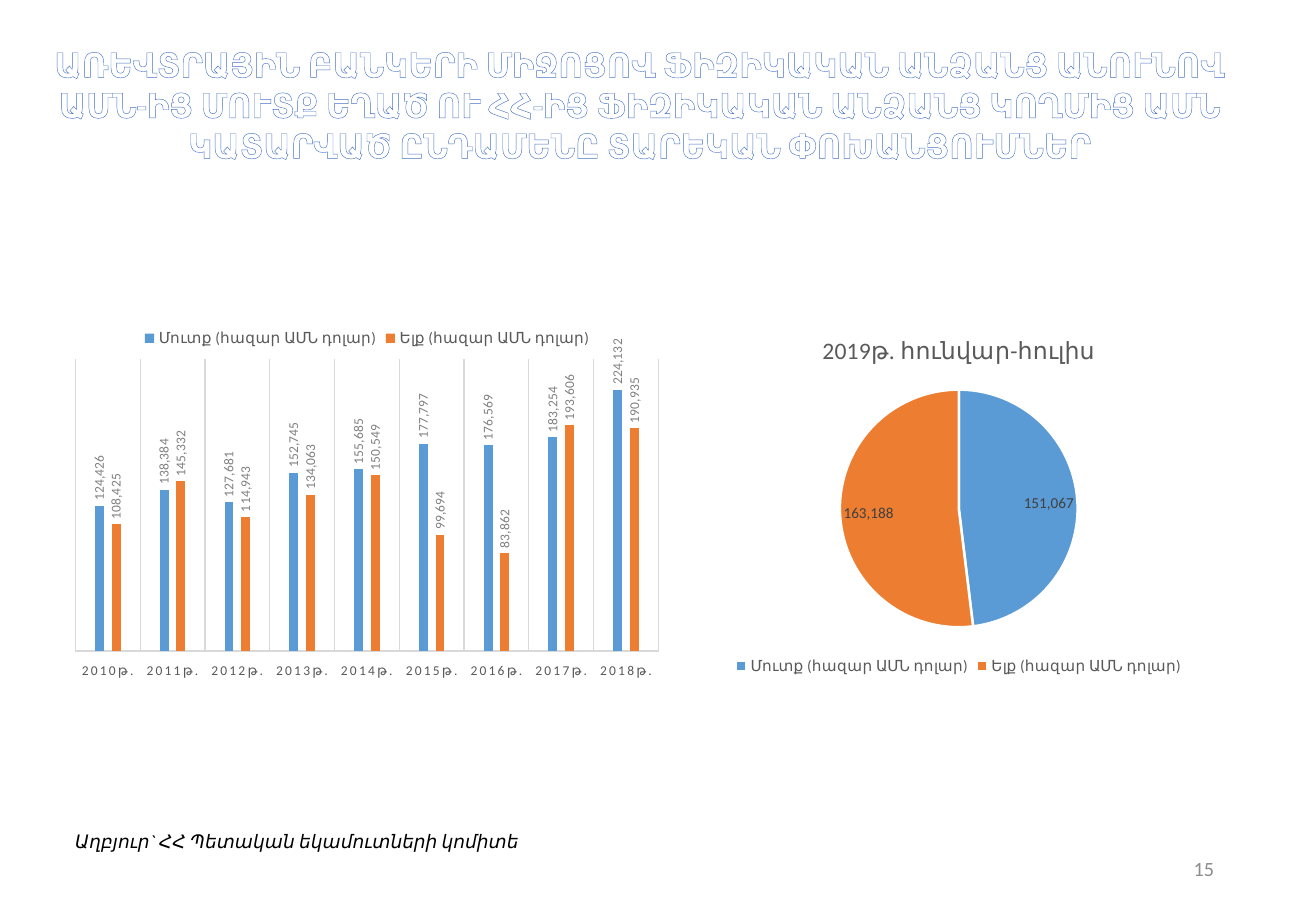
from dataclasses import dataclass

from lxml.etree import SubElement
from pptx import Presentation
from pptx.chart.data import CategoryChartData
from pptx.dml.color import RGBColor
from pptx.enum.chart import XL_CHART_TYPE as ChartType
from pptx.enum.chart import XL_LABEL_POSITION as LabelPosition
from pptx.enum.chart import XL_LEGEND_POSITION as LegendPosition
from pptx.enum.chart import XL_TICK_LABEL_POSITION as TickLabelPosition
from pptx.enum.chart import XL_TICK_MARK as TickMark
from pptx.enum.text import MSO_ANCHOR as Anchor
from pptx.enum.text import MSO_AUTO_SIZE as AutoSize
from pptx.enum.text import PP_ALIGN as Align
from pptx.oxml import parse_xml
from pptx.oxml.ns import nsdecls, qn
from pptx.util import Inches, Pt


@dataclass(frozen=True)
class Theme:
    """Font, colours and type sizes of the slide."""
    font: str = "Calibri"
    white: str = "FFFFFF"
    black: str = "000000"
    outline: str = "4472C4"
    inflow: str = "5B9BD5"
    outflow: str = "ED7D31"
    grid: str = "D9D9D9"
    chart_text: str = "595959"
    bar_label: str = "808080"
    pie_label: str = "404040"
    number: str = "8C8C8C"
    title_size: float = 20
    chart_title_size: float = 14
    number_size: float = 12
    source_size: float = 11
    chart_size: float = 10
    legend_size: float = 9
    axis_size: float = 8


THEME = Theme()
NUMBER_FORMAT = "#,##0"
TITLE = (
    "ԱՌԵՎՏՐԱՅԻՆ ԲԱՆԿԵՐԻ ՄԻՋՈՑՈՎ ՖԻԶԻԿԱԿԱՆ ԱՆՁԱՆՑ ԱՆՈՒՆՈՎ "
    "ԱՄՆ-ԻՑ ՄՈՒՏՔ ԵՂԱԾ ՈՒ ՀՀ-ԻՑ ՖԻԶԻԿԱԿԱՆ ԱՆՁԱՆՑ ԿՈՂՄԻՑ ԱՄՆ "
    "ԿԱՏԱՐՎԱԾ ԸՆԴԱՄԵՆԸ ՏԱՐԵԿԱՆ ՓՈԽԱՆՑՈՒՄՆԵՐ"
)
SOURCE = "Աղբյուր` ՀՀ Պետական եկամուտների կոմիտե"
PIE_TITLE = "2019թ. հունվար-հուլիս"
YEARS = [f"{year}թ." for year in range(2010, 2019)]
INFLOW, OUTFLOW = "Մուտք (հազար ԱՄՆ դոլար)", "Ելք (հազար ԱՄՆ դոլար)"
YEARLY = {
    INFLOW: (124426, 138384, 127681, 152745, 155685, 177797, 176569, 183254, 224132),
    OUTFLOW: (108425, 145332, 114943, 134063, 150549, 99694, 83862, 193606, 190935),
}
HALF_YEAR = {PIE_TITLE: (151067, 163188)}
FLOW_COLORS = (THEME.inflow, THEME.outflow)


def style_font(font, size, color, bold=False, italic=False):
    """Apply the theme font with a size, a colour and a style."""
    font.name = THEME.font
    font.size = Pt(size)
    font.bold = bold
    font.italic = italic
    font.color.rgb = RGBColor.from_string(color)


def fill_solid(target, color):
    """Fill a chart element with one colour."""
    target.format.fill.solid()
    target.format.fill.fore_color.rgb = RGBColor.from_string(color)


def draw_line(line, color, width):
    """Set the colour and width of a line."""
    line.color.rgb = RGBColor.from_string(color)
    line.width = Pt(width)


def add_text(slide, box, text, size, color, align=Align.LEFT, **style):
    """Add a wrapped one-paragraph text box and return its shape."""
    shape = slide.shapes.add_textbox(*map(Inches, box))
    frame = shape.text_frame
    frame.text = text
    frame.word_wrap = True
    frame.auto_size = AutoSize.SHAPE_TO_FIT_TEXT
    paragraph = frame.paragraphs[0]
    paragraph.alignment = align
    style_font(paragraph.runs[0].font, size, color, **style)
    return shape


def outline_text(shape, color, width):
    """Draw an outline around the letters of a text box."""
    properties = shape.text_frame.paragraphs[0].runs[0]._r.get_or_add_rPr()
    properties.insert(0, parse_xml(
        f'<a:ln {nsdecls("a")} w="{Pt(width)}"><a:solidFill>'
        f'<a:srgbClr val="{color}"/></a:solidFill></a:ln>'
    ))


def add_chart(slide, box, chart_type, categories, series, legend_position):
    """Add a chart with the theme font and a legend."""
    data = CategoryChartData(number_format=NUMBER_FORMAT)
    data.categories = categories
    for name, values in series.items():
        data.add_series(name, values)
    chart = slide.shapes.add_chart(chart_type, *map(Inches, box), data).chart
    style_font(chart.font, THEME.chart_size, THEME.black)
    chart.has_legend = True
    chart.legend.position = legend_position
    chart.legend.include_in_layout = False
    style_font(chart.legend.font, THEME.legend_size, THEME.chart_text)
    return chart


def add_labels(series, position, size, color):
    """Show the values of a series as data labels and return them."""
    labels = series.data_labels
    labels.show_value = True
    labels.number_format = NUMBER_FORMAT
    labels.number_format_is_linked = False
    labels.position = position
    style_font(labels.font, size, color)
    return labels


def place_plot(chart, **fractions):
    """Fix the inner plot area as fractions of the chart."""
    plot_area = chart._chartSpace.chart.plotArea
    for layout in plot_area.findall(qn("c:layout")):
        plot_area.remove(layout)
    layout = parse_xml(f'<c:layout {nsdecls("c")}><c:manualLayout/></c:layout>')
    settings = {"layoutTarget": "inner", "xMode": "edge", "yMode": "edge", **fractions}
    for name, value in settings.items():
        SubElement(layout[0], qn(f"c:{name}")).set("val", str(value))
    plot_area.insert(0, layout)


def add_yearly_chart(slide):
    """Add the clustered columns of yearly transfers."""
    chart = add_chart(slide, (0.52, 2.6, 5, 3), ChartType.COLUMN_CLUSTERED,
                      YEARS, YEARLY, LegendPosition.TOP)
    chart.has_title = False
    place_plot(chart, x=0.02, y=0.12, w=0.96, h=0.8)
    plot = chart.plots[0]
    plot.gap_width, plot.overlap, plot.vary_by_categories = 444, -90, False
    for series, color in zip(plot.series, FLOW_COLORS):
        fill_solid(series, color)
        labels = add_labels(series, LabelPosition.OUTSIDE_END, THEME.axis_size, THEME.bar_label)
        body = labels._element.find(qn("c:txPr")).find(qn("a:bodyPr"))
        body.set("rot", "-5400000")
        body.set("vert", "horz")
    years = chart.category_axis
    years.major_tick_mark = years.minor_tick_mark = TickMark.NONE
    years.tick_label_position = TickLabelPosition.LOW
    years.has_major_gridlines = True
    for line in (years.format.line, years.major_gridlines.format.line):
        draw_line(line, THEME.grid, 0.75)
    style_font(years.tick_labels.font, THEME.axis_size, THEME.chart_text)
    next(years._element.iter(qn("a:defRPr"))).set("spc", "120")
    amounts = chart.value_axis
    amounts.minimum_scale, amounts.maximum_scale = 0, 250000
    amounts.has_major_gridlines = False
    amounts.visible = False


def add_half_year_chart(slide):
    """Add the pie of transfers in the first months of 2019."""
    chart = add_chart(slide, (5.52, 2.6, 4.74, 3), ChartType.PIE,
                      (INFLOW, OUTFLOW), HALF_YEAR, LegendPosition.BOTTOM)
    chart.has_title = True
    title = chart.chart_title.text_frame
    title.text = PIE_TITLE
    style_font(title.paragraphs[0].runs[0].font, THEME.chart_title_size, THEME.chart_text)
    series = chart.plots[0].series[0]
    for index, color in enumerate(FLOW_COLORS):
        point = series.points[index]
        fill_solid(point, color)
        draw_line(point.format.line, THEME.white, 1.5)
    add_labels(series, LabelPosition.BEST_FIT, THEME.legend_size, THEME.pie_label)


def main():
    """Build the slide and save it."""
    presentation = Presentation()
    presentation.slide_width, presentation.slide_height = Inches(10.83), Inches(7.5)
    slide = presentation.slides.add_slide(presentation.slide_layouts[6])
    title = add_text(slide, (0.29, 0.31, 9.95, 1.11), TITLE, THEME.title_size,
                     THEME.white, Align.CENTER, bold=True)
    outline_text(title, THEME.outline, 0.8)
    number = add_text(slide, (7.65, 6.95, 2.44, 0.4), "15", THEME.number_size,
                      THEME.number, Align.RIGHT)
    number.text_frame.auto_size = AutoSize.NONE
    number.text_frame.vertical_anchor = Anchor.MIDDLE
    add_text(slide, (0.52, 6.78, 4.08, 0.29), SOURCE, THEME.source_size,
             THEME.black, italic=True)
    add_yearly_chart(slide)
    add_half_year_chart(slide)
    presentation.save("out.pptx")


if __name__ == "__main__":
    main()
